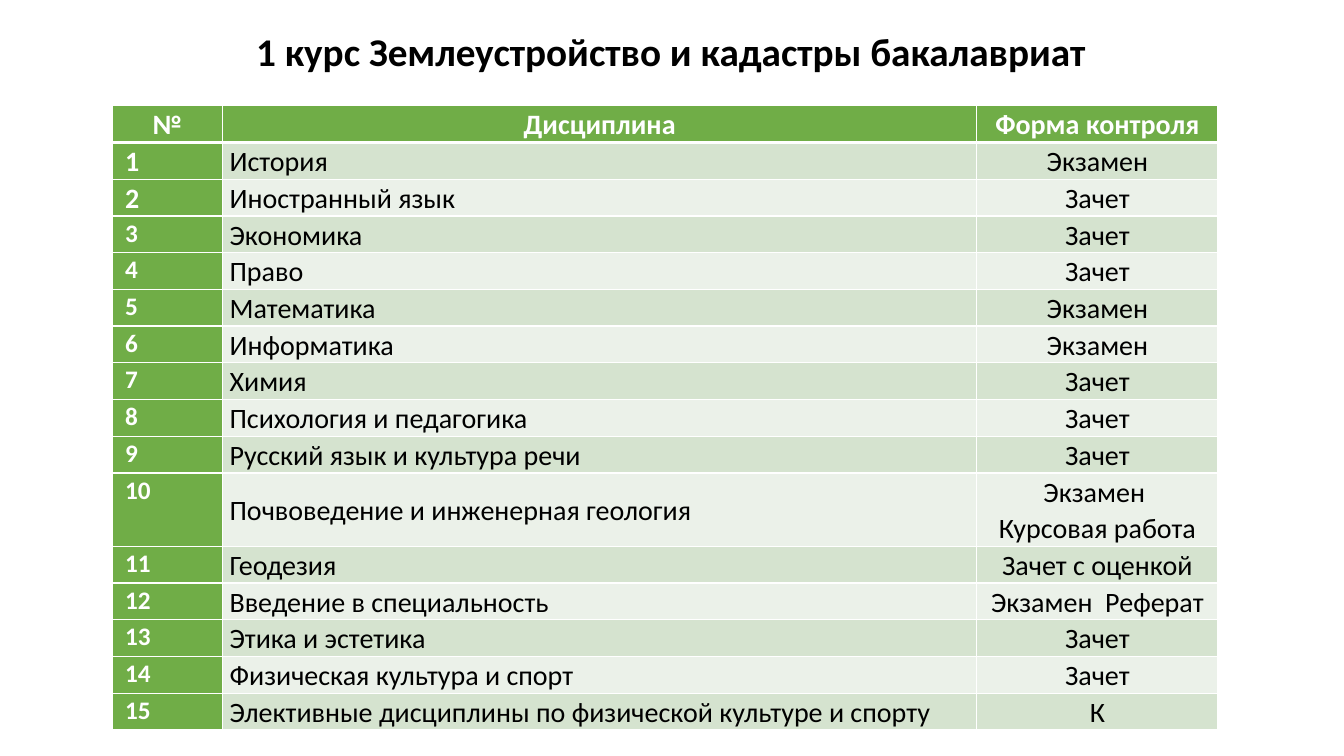
from dataclasses import dataclass
from typing import Any

from lxml.etree import SubElement
from pptx import Presentation
from pptx.dml.color import RGBColor
from pptx.enum.text import MSO_ANCHOR as Anchor, PP_ALIGN as Align
from pptx.oxml.ns import qn
from pptx.util import Inches, Pt

SLIDE_WIDTH, SLIDE_HEIGHT = Inches(13.33), Inches(7.5)
ROW_HEIGHT = Inches(0.36)
COLUMN_SHARES = (0.1, 0.682, 0.218)


@dataclass(frozen=True)
class Theme:
    font: str = "Calibri"
    white: str = "FFFFFF"
    black: str = "000000"
    green: str = "70AD47"
    bands: tuple[str, str] = ("D5E3CF", "EBF1E9")
    title_size: int = 28
    body_size: int = 20
    number_size: int = 18
    thin_border: int = 1
    thick_border: int = 3


@dataclass(frozen=True)
class Discipline:
    name: str
    control: str = "Зачет"
    control_anchor: Anchor = Anchor.TOP
    number_size: int = Theme.number_size
    lines: int = 1


@dataclass(frozen=True)
class CellStyle:
    fill: str
    color: str
    bold: bool = False
    size: int = Theme.body_size
    align: Align = Align.LEFT
    anchor: Anchor = Anchor.TOP
    left_margin: float = 0.07
    top_border: int = Theme.thin_border
    bottom_border: int = Theme.thin_border


THEME = Theme()
TITLE = "1 курс Землеустройство и кадастры бакалавриат"
HEADINGS = ("№", "Дисциплина", "Форма контроля")
DISCIPLINES = (
    Discipline("История", "Экзамен", Anchor.MIDDLE, THEME.body_size),
    Discipline("Иностранный язык", number_size=THEME.body_size),
    Discipline("Экономика"),
    Discipline("Право"),
    Discipline("Математика", "Экзамен"),
    Discipline("Информатика", "Экзамен"),
    Discipline("Химия"),
    Discipline("Психология и педагогика"),
    Discipline("Русский язык и культура речи"),
    Discipline("Почвоведение и инженерная геология",
               "Экзамен \vКурсовая работа", Anchor.MIDDLE, lines=2),
    Discipline("Геодезия", "Зачет с оценкой", Anchor.MIDDLE),
    Discipline("Введение в специальность", "Экзамен  Реферат", Anchor.MIDDLE),
    Discipline("Этика и эстетика", control_anchor=Anchor.MIDDLE),
    Discipline("Физическая культура и спорт", control_anchor=Anchor.MIDDLE),
    Discipline("Элективные дисциплины по физической культуре и спорту", "К", Anchor.MIDDLE),
)


def apply_format(target: Any, values: dict[str, Any]) -> None:
    for name, value in values.items():
        setattr(target, name, value)


def write_paragraph(paragraph: Any, text: str, size: int, color: str,
                    bold: bool, layout: dict[str, Any]) -> None:
    paragraph.text = text
    apply_format(paragraph, layout)
    for run in paragraph.runs:
        apply_format(run.font, {"name": THEME.font, "size": Pt(size), "bold": bold})
        run.font.color.rgb = RGBColor.from_string(color)


def add_borders(cell: Any, top: int, bottom: int) -> None:
    """Border the cell in white; call before filling, as the schema orders lines first."""
    properties = cell._tc.get_or_add_tcPr()
    widths = {"L": THEME.thin_border, "R": THEME.thin_border, "T": top, "B": bottom}
    for side, width in widths.items():
        line = SubElement(properties, qn(f"a:ln{side}"), w=str(Pt(width)))
        SubElement(SubElement(line, qn("a:solidFill")), qn("a:srgbClr"), val=THEME.white)


def write_cell(cell: Any, text: str, style: CellStyle) -> None:
    apply_format(cell, {
        "margin_left": Inches(style.left_margin), "margin_right": Inches(0.07),
        "margin_top": 0, "margin_bottom": 0, "vertical_anchor": style.anchor,
    })
    add_borders(cell, style.top_border, style.bottom_border)
    cell.fill.solid()
    cell.fill.fore_color.rgb = RGBColor.from_string(style.fill)
    write_paragraph(cell.text_frame.paragraphs[0], text, style.size, style.color,
                    style.bold, {"alignment": style.align, "line_spacing": 1.07})


def write_title(slide: Any) -> None:
    title = slide.shapes.title
    apply_format(title, {
        "left": round(SLIDE_WIDTH * 0.0675), "top": round(SLIDE_HEIGHT * 0.036),
        "width": round(SLIDE_WIDTH * 0.863), "height": round(SLIDE_HEIGHT * 0.124),
    })
    apply_format(title.text_frame, {"vertical_anchor": Anchor.TOP, "word_wrap": True})
    write_paragraph(title.text_frame.paragraphs[0], TITLE, THEME.title_size, THEME.black, True,
                    {"alignment": Align.CENTER, "line_spacing": 0.9, "space_before": Pt(10)})


def discipline_styles(number: int, discipline: Discipline) -> tuple[CellStyle, ...]:
    band = THEME.bands[(number - 1) % 2]
    top = THEME.thick_border if number == 1 else THEME.thin_border
    return (
        CellStyle(THEME.green, THEME.white, True, discipline.number_size,
                  left_margin=0.13, top_border=top),
        CellStyle(band, THEME.black, anchor=Anchor.MIDDLE, top_border=top),
        CellStyle(band, THEME.black, align=Align.CENTER,
                  anchor=discipline.control_anchor, top_border=top),
    )


def add_discipline_table(slide: Any) -> None:
    width = round(SLIDE_WIDTH * 0.823)
    line_counts = [1] + [discipline.lines for discipline in DISCIPLINES]
    table = slide.shapes.add_table(
        len(line_counts), len(HEADINGS), round(SLIDE_WIDTH * 0.0833),
        round(SLIDE_HEIGHT * 0.14), width, ROW_HEIGHT * sum(line_counts)).table
    for column, share in zip(table.columns, COLUMN_SHARES):
        column.width = round(width * share)
    for row, lines in zip(table.rows, line_counts):
        row.height = ROW_HEIGHT * lines

    heading_style = CellStyle(THEME.green, THEME.white, True, align=Align.CENTER,
                              bottom_border=THEME.thick_border)
    for column, heading in enumerate(HEADINGS):
        write_cell(table.cell(0, column), heading, heading_style)
    for number, discipline in enumerate(DISCIPLINES, start=1):
        texts = (str(number), discipline.name, discipline.control)
        styles = discipline_styles(number, discipline)
        for column, (text, style) in enumerate(zip(texts, styles)):
            write_cell(table.cell(number, column), text, style)


def main() -> None:
    presentation = Presentation()
    apply_format(presentation, {"slide_width": SLIDE_WIDTH, "slide_height": SLIDE_HEIGHT})
    slide = presentation.slides.add_slide(presentation.slide_layouts.get_by_name("Title Only"))
    write_title(slide)
    add_discipline_table(slide)
    presentation.save("out.pptx")


if __name__ == "__main__":
    main()
